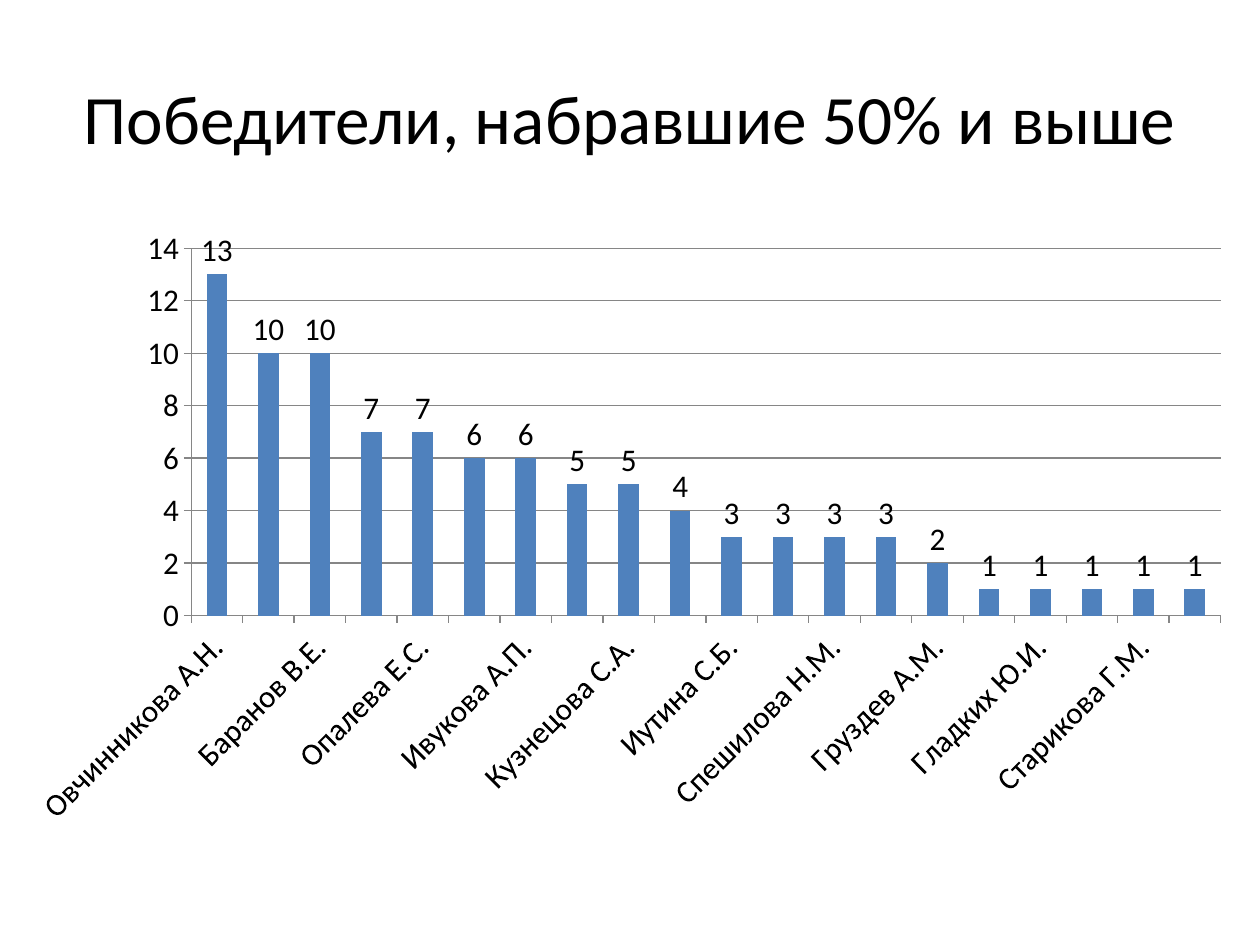
from lxml import etree
from pptx import Presentation
from pptx.chart.data import CategoryChartData
from pptx.dml.color import RGBColor
from pptx.enum.chart import XL_CHART_TYPE, XL_LABEL_POSITION, XL_TICK_MARK
from pptx.enum.text import MSO_ANCHOR, PP_ALIGN
from pptx.oxml.ns import qn
from pptx.util import Inches, Pt

BLACK = RGBColor(0x00, 0x00, 0x00)
BLUE = RGBColor(0x4F, 0x81, 0xBD)
GREY = RGBColor(0x86, 0x86, 0x86)

TITLE = "Победители, набравшие 50% и выше"
WINNERS = [
    ("Овчинникова А.Н.", 13), ("Шлыков Н.А.", 10), ("Баранов В.Е.", 10),
    ("Хозяшева З.Л.", 7), ("Опалева Е.С.", 7), ("Сальникова Е.Г.", 6),
    ("Ивукова А.П.", 6), ("Овчинникова А.А.", 5), ("Кузнецова С.А.", 5),
    ("Полетаева Т.М.", 4), ("Иутина С.Б.", 3), ("Сысоева Н.С.", 3),
    ("Спешилова Н.М.", 3), ("Бушуева Т.В.", 3), ("Груздев А.М.", 2),
    ("Голубева О.Л.", 1), ("Гладких Ю.И.", 1), ("Зеленина В.В.", 1),
    ("Старикова Г.М.", 1), ("Масалкина Н.А.", 1),
]
PLOT_AREA = {"x": 0.12, "y": 0.045, "w": 0.867, "h": 0.589}


def set_attributes(target, values):
    for name, value in values.items():
        setattr(target, name, value)


class SlideBuilder:
    """Holds the style and the current slide; boxes are shares of the slide."""

    font_name = "Calibri"

    def __init__(self, presentation):
        self.width = presentation.slide_width
        self.height = presentation.slide_height
        self.slide = presentation.slides.add_slide(presentation.slide_layouts[6])

    def place(self, left, top, width, height):
        return (int(left * self.width), int(top * self.height),
                int(width * self.width), int(height * self.height))

    def style_font(self, font, size):
        set_attributes(font, {"name": self.font_name, "size": Pt(size), "bold": False})
        font.color.rgb = BLACK

    def add_title(self, text, box, size):
        frame = self.slide.shapes.add_textbox(*self.place(*box)).text_frame
        set_attributes(frame, {"word_wrap": True, "vertical_anchor": MSO_ANCHOR.MIDDLE})
        paragraph = frame.paragraphs[0]
        set_attributes(paragraph, {"text": text, "alignment": PP_ALIGN.CENTER})
        self.style_font(paragraph.runs[0].font, size)

    def add_column_chart(self, rows, box, size):
        names, scores = zip(*rows)
        data = CategoryChartData(number_format="General")
        data.categories = names
        data.add_series("Series 1", scores)
        chart = self.slide.shapes.add_chart(
            XL_CHART_TYPE.COLUMN_CLUSTERED, *self.place(*box), data).chart
        set_attributes(chart, {"has_legend": False, "has_title": False})
        self.style_font(chart.font, size)
        self.style_columns(chart.plots[0], size)
        self.style_axes(chart, size)
        self.set_plot_area(chart)

    def style_columns(self, plot, size):
        set_attributes(plot, {"gap_width": 150, "vary_by_categories": False,
                              "has_data_labels": True})
        set_attributes(plot.data_labels, {"show_value": True,
                                          "position": XL_LABEL_POSITION.OUTSIDE_END})
        self.style_font(plot.data_labels.font, size)
        fill = plot.series[0].format.fill
        fill.solid()
        fill.fore_color.rgb = BLUE

    def style_axes(self, chart, size):
        set_attributes(chart.value_axis, {"minimum_scale": 0, "maximum_scale": 14,
                                          "major_unit": 2, "has_major_gridlines": True})
        for axis in (chart.category_axis, chart.value_axis):
            set_attributes(axis, {"major_tick_mark": XL_TICK_MARK.OUTSIDE,
                                  "minor_tick_mark": XL_TICK_MARK.NONE})
            self.style_font(axis.tick_labels.font, size)
        for part in (chart.category_axis, chart.value_axis, chart.value_axis.major_gridlines):
            part.format.line.color.rgb = GREY
            part.format.line.width = Pt(0.75)
        body = chart.category_axis._element.find(qn("c:txPr")).find(qn("a:bodyPr"))
        body.set("rot", "-2700000")
        body.set("vert", "horz")

    def set_plot_area(self, chart):
        """Fix the inner plot area, given as shares of the chart."""
        plot_area = chart._chartSpace.chart.plotArea
        for old_layout in plot_area.findall(qn("c:layout")):
            plot_area.remove(old_layout)
        layout = etree.Element(qn("c:layout"))
        plot_area.insert(0, layout)
        manual = etree.SubElement(layout, qn("c:manualLayout"))
        values = {"layoutTarget": "inner", "xMode": "edge", "yMode": "edge", **PLOT_AREA}
        for name, value in values.items():
            etree.SubElement(manual, qn(f"c:{name}")).set("val", str(value))


def main():
    presentation = Presentation()
    set_attributes(presentation, {"slide_width": Inches(10), "slide_height": Inches(7.5)})
    builder = SlideBuilder(presentation)
    builder.add_title(TITLE, (0.05, 0.04, 0.9, 0.167), 39.6)
    builder.add_column_chart(WINNERS, (0.028, 0.233, 0.953, 0.66), 18)
    presentation.save("out.pptx")


if __name__ == "__main__":
    main()
